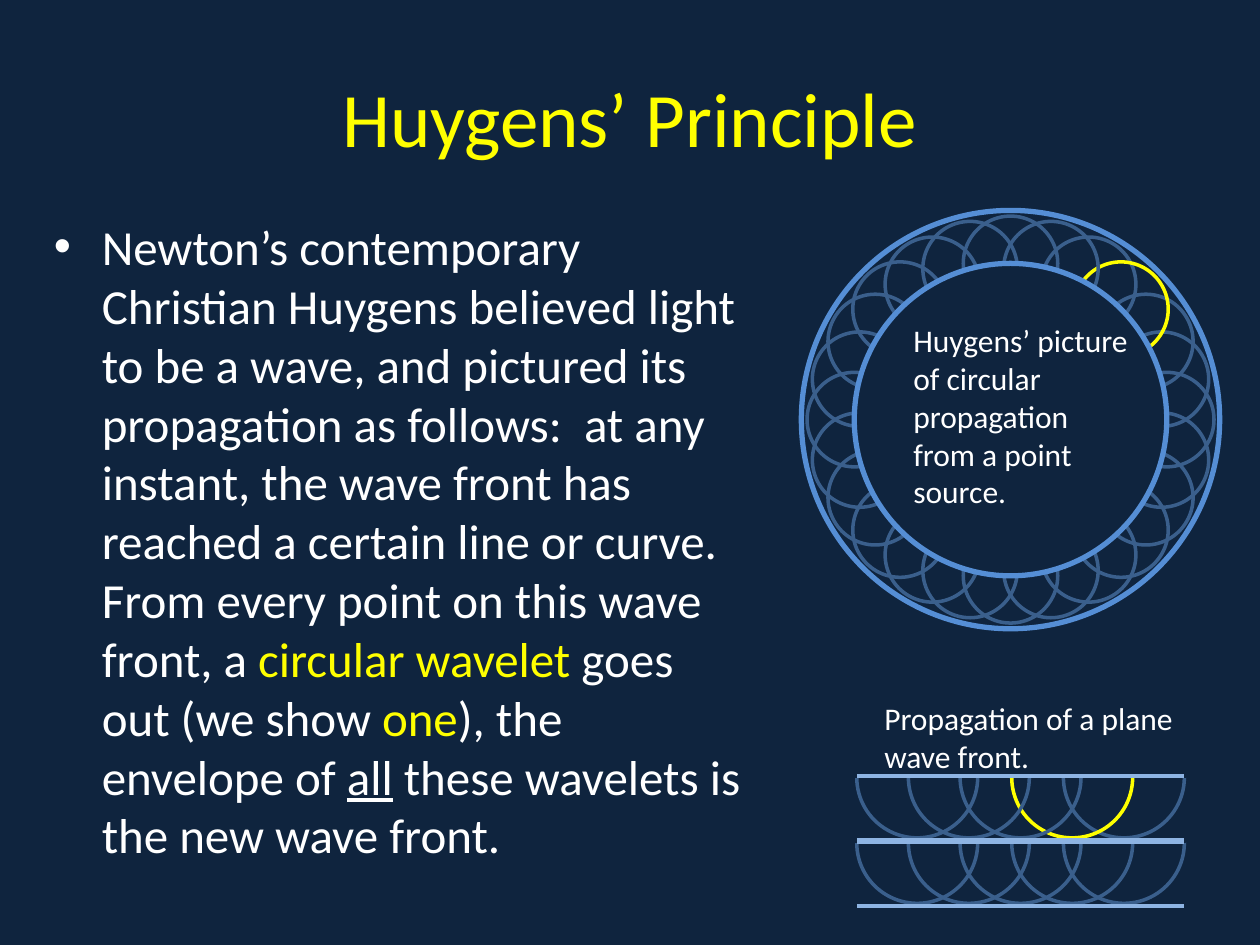
from math import cos, radians, sin

from lxml import etree
from pptx import Presentation
from pptx.dml.color import RGBColor
from pptx.enum.shapes import MSO_CONNECTOR, MSO_SHAPE
from pptx.enum.text import MSO_ANCHOR, PP_ALIGN
from pptx.oxml.ns import qn
from pptx.util import Inches, Pt

OVAL, RECT = MSO_SHAPE.OVAL, MSO_SHAPE.RECTANGLE
STRAIGHT = MSO_CONNECTOR.STRAIGHT
TOP, MIDDLE = MSO_ANCHOR.TOP, MSO_ANCHOR.MIDDLE
LEFT, CENTER = PP_ALIGN.LEFT, PP_ALIGN.CENTER

COLORS = {
    "background": "0F243E",
    "highlight": "FFFF00",
    "text": "FFFFFF",
    "wavelet": "3A5F8C",
    "circular_front": "558ED5",
    "plane_front": "8EB4E3",
}


def rgb(name):
    return RGBColor.from_string(COLORS[name])


class SlideBuilder:
    font = "Calibri"

    def __init__(self, slide):
        self.slide = slide
        slide.background.fill.solid()
        slide.background.fill.fore_color.rgb = rgb("background")

    def text(self, x, y, w, h, runs, size, anchor=TOP, align=LEFT):
        """Add one paragraph from (text, colour, underline) runs."""
        s = self.slide.shapes.add_textbox(Inches(x), Inches(y), Inches(w), Inches(h))
        tf = s.text_frame
        tf.word_wrap = True
        tf.vertical_anchor = anchor
        p = tf.paragraphs[0]
        p.alignment = align
        for text, color, underline in runs:
            r = p.add_run()
            r.text = text
            r.font.name = self.font
            r.font.size = Pt(size)
            r.font.color.rgb = rgb(color)
            if underline:
                r.font.underline = True
        return p

    def bullet(self, p, indent):
        pPr = p._p.get_or_add_pPr()
        pPr.set("marL", str(Inches(indent)))
        pPr.set("indent", str(-Inches(indent)))
        etree.SubElement(pPr, qn("a:buFont")).set("typeface", "Arial")
        etree.SubElement(pPr, qn("a:buChar")).set("char", "•")

    def shape(self, kind, x, y, w, h, line, width, fill=None):
        s = self.slide.shapes.add_shape(kind, Inches(x), Inches(y), Inches(w), Inches(h))
        s.shadow.inherit = False
        s.line.color.rgb = rgb(line)
        s.line.width = Pt(width)
        if fill:
            s.fill.solid()
            s.fill.fore_color.rgb = rgb(fill)
        else:
            s.fill.background()

    def circle(self, cx, cy, radius, line, width=2, fill=None):
        self.shape(OVAL, cx - radius, cy - radius, 2 * radius, 2 * radius, line, width, fill)

    def plane_front(self, x1, x2, y):
        s = self.slide.shapes.add_connector(STRAIGHT, Inches(x1), Inches(y), Inches(x2), Inches(y))
        s.line.color.rgb = rgb("plane_front")
        s.line.width = Pt(2.25)
        etree.SubElement(s._element.spPr, qn("a:effectLst"))


def circular_propagation(b):
    cx, cy, radius = 8.02, 3.33, 1.24
    # Every second wavelet lies behind its neighbours.
    for angle in [*range(0, 360, 30), *range(15, 360, 30)]:
        color = "highlight" if angle == 45 else "wavelet"
        a = radians(angle)
        b.circle(cx + radius * cos(a), cy - radius * sin(a), 0.375, color)
    b.circle(cx, cy, radius, "circular_front", 3, "background")
    b.circle(cx, cy, 1.66, "circular_front", 3)
    b.text(7.15, 2.5, 1.92, 1.62,
           [("Huygens’ picture of circular propagation from a point source.", "text", False)], 18)


def plane_row(b, y, highlighted=None):
    """Draw half wavelets between the wave fronts at y and y + 0.51."""
    left, right, radius = 6.8, 9.4, 0.48
    for i in reversed(range(5)):
        color = "highlight" if i == highlighted else "wavelet"
        b.circle(left + radius + 0.41 * i, y + 0.01, radius, color)
    b.shape(RECT, 6.74, y - 0.58, 2.67, 0.58, "background", 2, "background")
    b.plane_front(left, right, y)
    b.plane_front(left, right, y + 0.51)


def main():
    prs = Presentation()
    prs.slide_width, prs.slide_height = Inches(10), Inches(7.5)
    b = SlideBuilder(prs.slides.add_slide(prs.slide_layouts[6]))

    b.text(0.5, 0.3, 9, 1.25, [("Huygens’ Principle", "highlight", False)], 44, MIDDLE, CENTER)
    p = b.text(0.33, 1.67, 5.67, 5.42, [
        ("Newton’s contemporary Christian Huygens believed light to be a wave, and pictured its "
         "propagation as follows:  at any instant, the wave front has reached a certain line or "
         "curve.  From every point on this wave front, a ", "text", False),
        ("circular wavelet ", "highlight", False),
        ("goes out (we show ", "text", False),
        ("one", "highlight", False),
        ("), the envelope of ", "text", False),
        ("all", "text", True),
        (" these wavelets is the new wave front.", "text", False),
    ], 28)
    b.bullet(p, 0.38)

    circular_propagation(b)
    plane_row(b, 6.68)
    plane_row(b, 6.16, highlighted=3)
    b.text(6.92, 5.5, 2.5, 0.71, [("Propagation of a plane wave front.", "text", False)], 18)

    prs.save("out.pptx")


if __name__ == "__main__":
    main()
